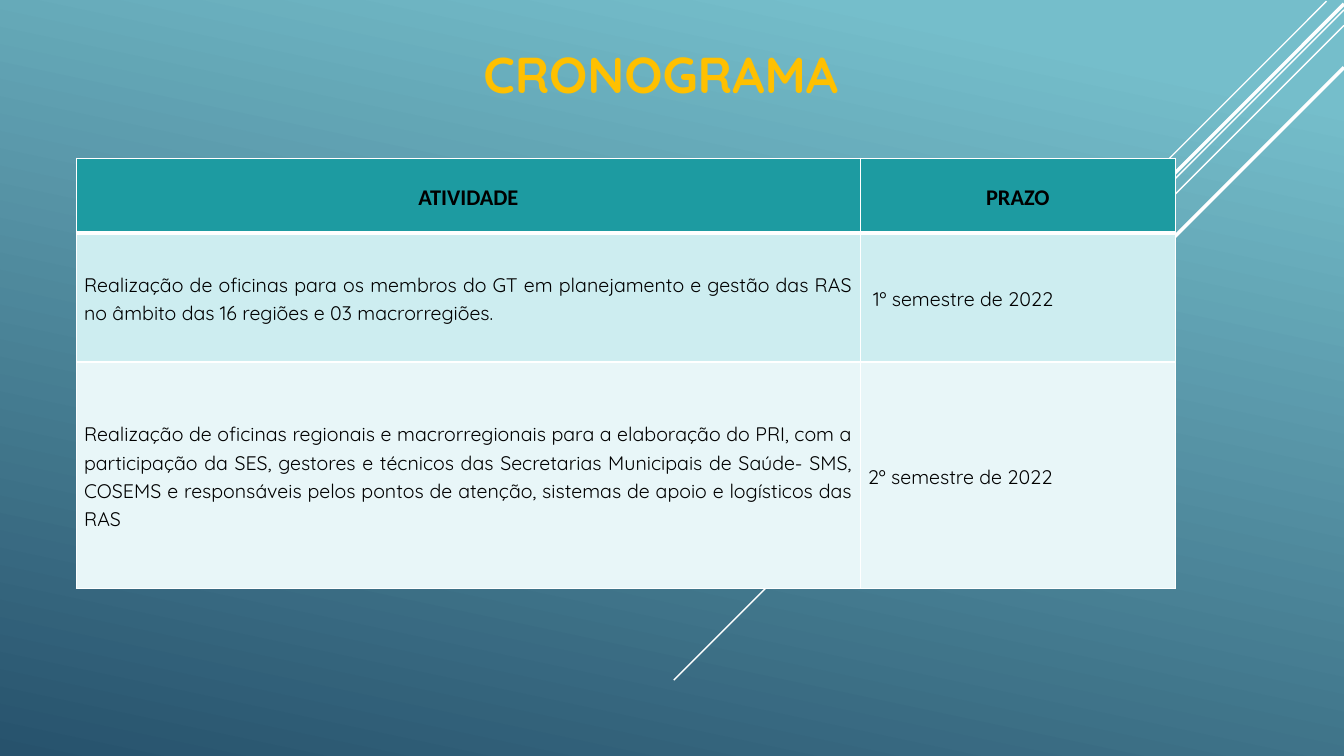
from lxml import etree
from pptx import Presentation
from pptx.dml.color import RGBColor
from pptx.enum.shapes import MSO_CONNECTOR
from pptx.enum.text import MSO_ANCHOR, PP_ALIGN
from pptx.oxml.ns import qn
from pptx.util import Cm, Pt

WHITE = RGBColor(0xFF, 0xFF, 0xFF)
BLACK = RGBColor(0x00, 0x00, 0x00)
GOLD = RGBColor(0xFF, 0xC0, 0x00)
SKY = RGBColor(0x75, 0xBE, 0xCB)
NAVY = RGBColor(0x27, 0x52, 0x6C)
TEAL = RGBColor(0x1D, 0x9B, 0xA1)
AQUA = RGBColor(0xCD, 0xED, 0xF0)
PALE_AQUA = RGBColor(0xE8, 0xF6, 0xF8)

STRAIGHT = MSO_CONNECTOR.STRAIGHT
TOP, MIDDLE = MSO_ANCHOR.TOP, MSO_ANCHOR.MIDDLE
LEFT, CENTER, JUSTIFY = PP_ALIGN.LEFT, PP_ALIGN.CENTER, PP_ALIGN.JUSTIFY

TITLE_FONT = {"name": "Quicksand", "size": Pt(36), "bold": True}
HEADER_FONT = {"name": "Calibri", "size": Pt(16), "bold": True}
BODY_FONT = {"name": "Quicksand", "size": Pt(14), "bold": False}
CELL_FRAME = {"vertical_anchor": MIDDLE, "margin_left": Cm(0.19), "margin_right": Cm(0.19),
              "margin_top": 0, "margin_bottom": 0}

# Right end (x, y), horizontal run and line weight of each diagonal
DIAGONALS = [
    (33.43, 0.03, 10.57, 1),
    (33.87, 0.25, 16.89, 1),
    (33.87, 0.64, 13.77, 1),
    (33.87, 0.10, 13.47, 2.5),
    (33.87, 1.70, 12.07, 2.5),
]

COLUMN_WIDTHS = [19.75, 7.94]
ROW_HEIGHTS = [1.88, 3.25, 5.7]
ROW_FILLS = [TEAL, AQUA, PALE_AQUA]
SCHEDULE = [
    ("ATIVIDADE", "PRAZO"),
    ("Realização de oficinas para os membros do GT em planejamento e gestão das RAS "
     "no âmbito das 16 regiões e 03 macrorregiões.",
     " 1º semestre de 2022"),
    ("Realização de oficinas regionais e macrorregionais para a elaboração do PRI, com a "
     "participação da SES, gestores e técnicos das Secretarias Municipais de Saúde- SMS, "
     "COSEMS e responsáveis pelos pontos de atenção, sistemas de apoio e logísticos das RAS",
     "2º semestre de 2022"),
]


def apply_format(target, values):
    for name, value in values.items():
        setattr(target, name, value)


def write_text(frame, text, font, color, **paragraph_format):
    para = frame.paragraphs[0]
    apply_format(para, paragraph_format)
    span = para.add_run()
    span.text = text
    apply_format(span.font, font)
    span.font.color.rgb = color


def paint_background(slide):
    fill = slide.background.fill
    fill.gradient()
    fill.gradient_angle = 258
    for stop, position, color in zip(fill.gradient_stops, (0.1, 1), (SKY, NAVY)):
        stop.position = position
        stop.color.rgb = color


def add_diagonal(slide, right, top, run, weight):
    """Draw a white line falling to the left at 45 degrees."""
    line = slide.shapes.add_connector(STRAIGHT, Cm(right), Cm(top), Cm(right - run), Cm(top + run))
    line.line.color.rgb = WHITE
    line.line.width = Pt(weight)
    etree.SubElement(line._element.spPr, qn("a:effectLst"))


def fill_title(slide, text):
    title = slide.shapes.title
    apply_format(title, {"left": Cm(1.22), "top": Cm(0.97), "width": Cm(30.86), "height": Cm(17.22)})
    apply_format(title.text_frame, {"vertical_anchor": TOP, "word_wrap": True})
    write_text(title.text_frame, text, TITLE_FONT, GOLD, alignment=CENTER, space_after=Pt(6))


def set_borders(cell, weights):
    """Give the cell white edges; weights maps L, R, T and B to points."""
    properties = cell._tc.get_or_add_tcPr()
    for side, weight in weights.items():
        edge = etree.SubElement(properties, qn(f"a:ln{side}"), w=str(Pt(weight)))
        solid = etree.SubElement(edge, qn("a:solidFill"))
        etree.SubElement(solid, qn("a:srgbClr"), val=str(WHITE))


def add_schedule(slide):
    table = slide.shapes.add_table(
        len(ROW_HEIGHTS), len(COLUMN_WIDTHS), Cm(1.93), Cm(3.99),
        Cm(sum(COLUMN_WIDTHS)), Cm(sum(ROW_HEIGHTS))).table
    for column, width in zip(table.columns, COLUMN_WIDTHS):
        column.width = Cm(width)
    for row, height in zip(table.rows, ROW_HEIGHTS):
        row.height = Cm(height)

    for row_index, texts in enumerate(SCHEDULE):
        is_header = row_index == 0
        font = HEADER_FONT if is_header else BODY_FONT
        alignments = (CENTER, CENTER) if is_header else (JUSTIFY, LEFT)
        weights = {"L": 1, "R": 1, "T": 3 if row_index == 1 else 1, "B": 3 if is_header else 1}
        for column_index, text in enumerate(texts):
            cell = table.cell(row_index, column_index)
            is_last = (row_index, column_index) == (2, 1)
            set_borders(cell, weights)
            cell.fill.solid()
            cell.fill.fore_color.rgb = ROW_FILLS[row_index]
            apply_format(cell, CELL_FRAME)
            write_text(cell.text_frame, text, font, BLACK, alignment=alignments[column_index],
                       line_spacing=1.15, space_after=Pt(0 if is_last else 6))


def main():
    deck = Presentation()
    deck.slide_width, deck.slide_height = Cm(33.87), Cm(19.05)
    slide = deck.slides.add_slide(deck.slide_layouts.get_by_name("Title Only"))
    paint_background(slide)
    for diagonal in DIAGONALS:
        add_diagonal(slide, *diagonal)
    fill_title(slide, "CRONOGRAMA")
    add_schedule(slide)
    deck.save("out.pptx")


if __name__ == "__main__":
    main()
